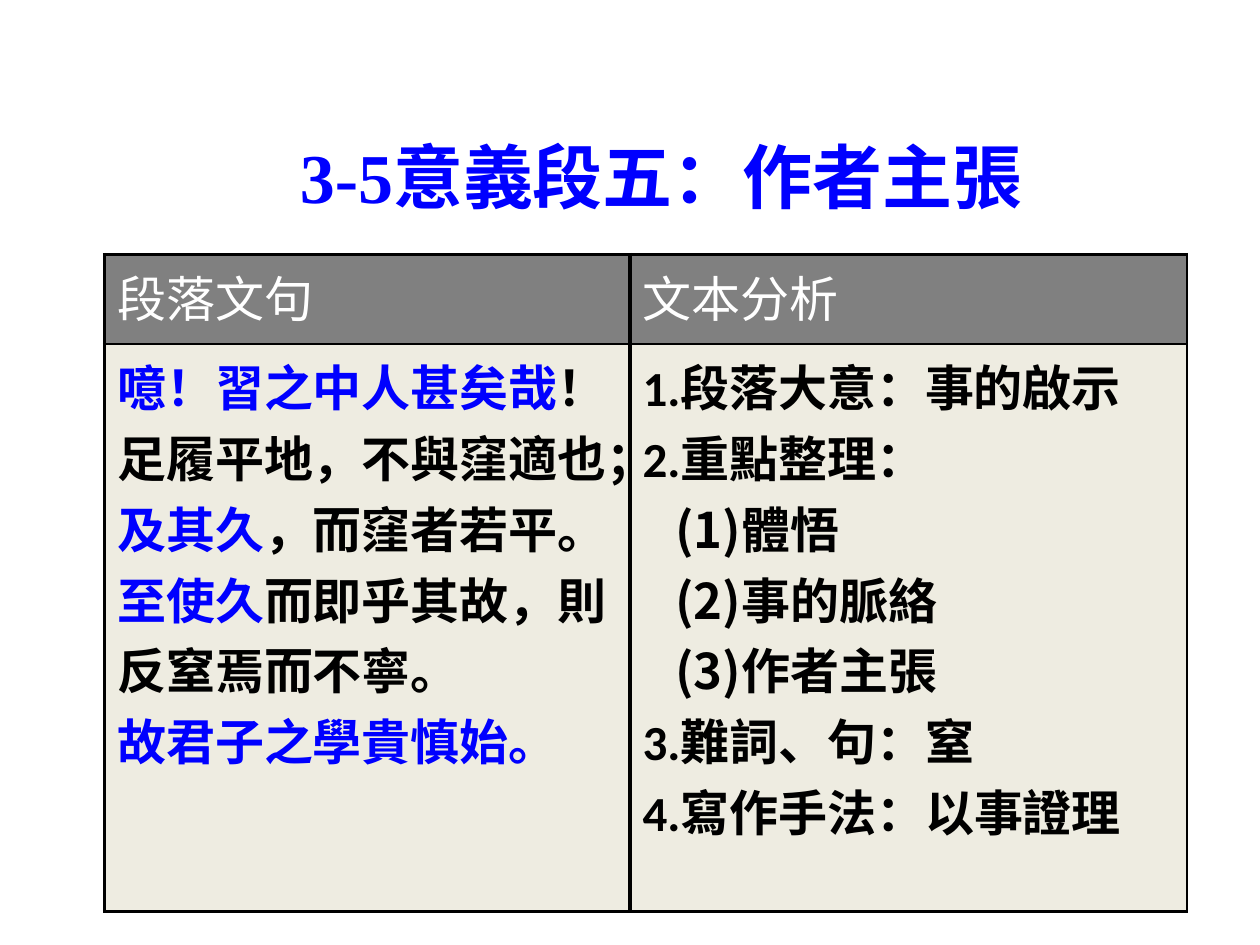
from dataclasses import dataclass

from lxml import etree
from pptx import Presentation
from pptx import util as u
from pptx.dml.color import RGBColor
from pptx.enum import text
from pptx.oxml import ns

COLORS = {
    "blue": "0000FF",
    "black": "000000",
    "white": "FFFFFF",
    "header": "808080",
    "body": "EEECE1",
}
LATIN = "Calibri"
CJK = "Noto Sans CJK TC"
THICK, THIN = 2.25, 1


@dataclass(frozen=True)
class Phrase:
    words: str
    color: str = "black"
    font: str = LATIN


@dataclass(frozen=True)
class Line:
    phrases: tuple[Phrase, ...]
    indent: float = 0


@dataclass(frozen=True)
class Entry:
    lines: tuple[Line, ...]
    fill: str
    bold: bool
    borders: dict[str, float]


def line(*phrases: Phrase, indent: float = 0) -> Line:
    return Line(phrases, indent)


def write_run(paragraph, words: str, *, size: float, color: str, font: str, bold: bool) -> None:
    run = paragraph.add_run()
    run.text = words
    run.font.size = u.Pt(size)
    run.font.bold = bold
    run.font.name = font
    run.font.color.rgb = RGBColor.from_string(COLORS[color])
    east_asian = etree.SubElement(run.font._element, ns.qn("a:ea"))
    east_asian.set("typeface", CJK)


def draw_border(cell, side: str, width: float) -> None:
    properties = cell._tc.get_or_add_tcPr()
    edge = etree.SubElement(properties, ns.qn(f"a:ln{side}"), w=str(u.Pt(width)))
    solid = etree.SubElement(edge, ns.qn("a:solidFill"))
    etree.SubElement(solid, ns.qn("a:srgbClr"), val=COLORS["black"])


def draw_entry(cell, entry: Entry) -> None:
    for side in "LRTB":
        draw_border(cell, side, entry.borders[side])
    cell.fill.solid()
    cell.fill.fore_color.rgb = RGBColor.from_string(COLORS[entry.fill])
    frame = cell.text_frame
    for index, content in enumerate(entry.lines):
        paragraph = frame.add_paragraph() if index else frame.paragraphs[0]
        if content.indent:
            paragraph._p.get_or_add_pPr().set("marL", str(u.Cm(content.indent)))
        for phrase in content.phrases:
            write_run(paragraph, phrase.words, size=28, color=phrase.color,
                      font=phrase.font, bold=entry.bold)


def draw_heading(slide, words: str) -> None:
    box = slide.shapes.add_textbox(u.Cm(3.12), u.Cm(2.72), u.Cm(20.42), u.Cm(1.63))
    frame = box.text_frame
    frame.word_wrap = True
    frame.vertical_anchor = text.MSO_ANCHOR.MIDDLE
    paragraph = frame.paragraphs[0]
    paragraph.alignment = text.PP_ALIGN.CENTER
    write_run(paragraph, words, size=40, color="blue", font="Times New Roman", bold=True)


def draw_analysis(slide, rows: list[list[Entry]]) -> None:
    widths, heights = (10.59, 11.23), (1.8, 11.45)
    table = slide.shapes.add_table(
        len(rows), len(widths), u.Cm(2.11), u.Cm(5.13),
        u.Cm(sum(widths)), u.Cm(sum(heights)),
    ).table
    for column, width in zip(table.columns, widths):
        column.width = u.Cm(width)
    for row, height, entries in zip(table.rows, heights, rows):
        row.height = u.Cm(height)
        for cell, entry in zip(row.cells, entries):
            draw_entry(cell, entry)


def header(words: str, right: float) -> Entry:
    borders = {"L": THICK, "R": right, "T": THICK, "B": THIN}
    return Entry((line(Phrase(words, "white")),), "header", False, borders)


def body(right: float, *lines: Line) -> Entry:
    borders = {"L": THICK, "R": right, "T": THIN, "B": THICK}
    return Entry(lines, "body", True, borders)


def main() -> None:
    passage = body(
        THICK,
        line(Phrase("噫！習之中人甚矣哉", "blue"), Phrase("！")),
        line(Phrase("足履平地，不與窪適也；"), Phrase("及其久", "blue"), Phrase("，而窪者若平。")),
        line(Phrase("至使久", "blue"), Phrase("而即乎其故，則反窒焉而不寧。")),
        line(Phrase("故君子之學貴慎始。", "blue")),
    )
    points = [
        line(Phrase(words, font=CJK), indent=0.66)
        for words in ("(1)體悟", "(2)事的脈絡", "(3)作者主張")
    ]
    analysis = body(
        THIN,
        line(Phrase("1.段落大意"), Phrase("：事的啟示", font=CJK)),
        line(Phrase("2.重點整理"), Phrase("：", font=CJK)),
        *points,
        line(Phrase("3.難詞、句：窒")),
        line(Phrase("4.寫作手法：以事證理")),
    )
    deck = Presentation()
    deck.slide_width, deck.slide_height = u.Cm(25.4), u.Cm(19.05)
    slide = deck.slides.add_slide(deck.slide_layouts[6])
    draw_heading(slide, "3-5意義段五：作者主張")
    draw_analysis(slide, [
        [header("段落文句", THICK), header("文本分析", THIN)],
        [passage, analysis],
    ])
    deck.save("out.pptx")


if __name__ == "__main__":
    main()
